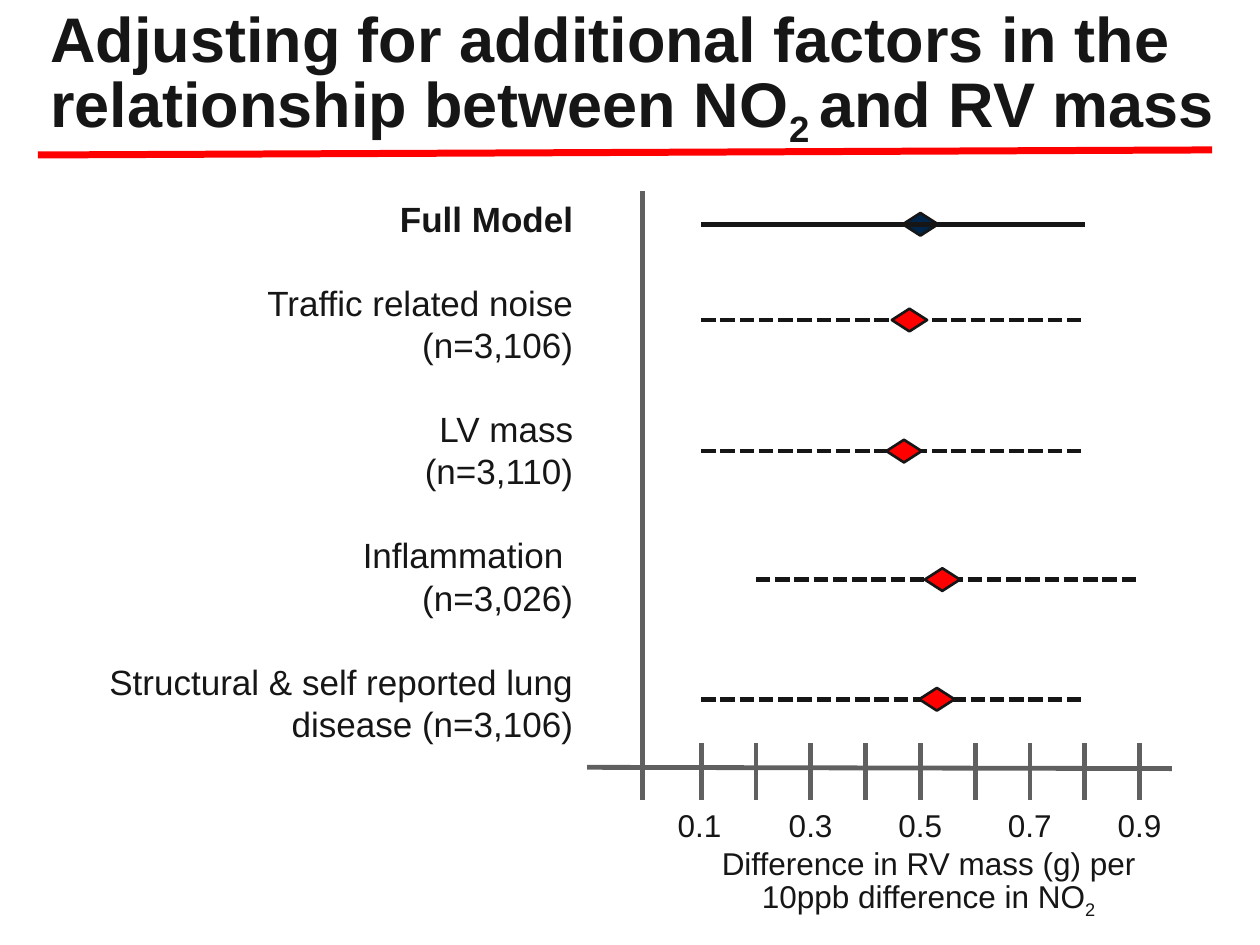
from dataclasses import dataclass

from pptx import Presentation
from pptx.dml.color import RGBColor
from pptx.enum.dml import MSO_LINE
from pptx.enum.shapes import MSO_CONNECTOR, MSO_SHAPE
from pptx.enum.text import MSO_ANCHOR, MSO_AUTO_SIZE, PP_ALIGN
from pptx.oxml.ns import qn
from pptx.util import Inches, Pt
from lxml import etree

STRAIGHT = MSO_CONNECTOR.STRAIGHT
DIAMOND = MSO_SHAPE.DIAMOND
DASH = MSO_LINE.SQUARE_DOT
LEFT, CENTER, RIGHT = PP_ALIGN.LEFT, PP_ALIGN.CENTER, PP_ALIGN.RIGHT
TOP, MIDDLE = MSO_ANCHOR.TOP, MSO_ANCHOR.MIDDLE
FIXED_SIZE = MSO_AUTO_SIZE.NONE


@dataclass(frozen=True)
class Theme:
    font: str = "Arial"
    ink: str = "161616"
    axis: str = "606060"
    accent: str = "FF0000"
    full_model: str = "00254A"
    title_size: float = 36
    label_size: float = 20
    axis_size: float = 18
    title_pitch: float = 43
    label_pitch: float = 24
    axis_pitch: float = 21.6
    rule_width: float = 4
    line_width: float = 2.75
    marker_outline: float = 1.5


@dataclass(frozen=True)
class Estimate:
    label: tuple[str, ...]
    y: float
    low: float
    mean: float
    high: float
    is_full: bool = False


THEME = Theme()
ESTIMATES = (
    Estimate(("Full Model",), 1.78, 0.1, 0.5, 0.8, True),
    Estimate(("Traffic related noise", "(n=3,106)"), 2.54, 0.1, 0.48, 0.8),
    Estimate(("LV mass", "(n=3,110)"), 3.58, 0.1, 0.47, 0.8),
    Estimate(("Inflammation ", "(n=3,026)"), 4.6, 0.2, 0.54, 0.9),
    Estimate(("Structural & self reported lung disease (n=3,106)",), 5.55, 0.1, 0.53, 0.8),
)
AXIS_ZERO, AXIS_UNIT = 5.13, 4.35
TICK_TOP, TICK_BOTTOM = 5.9, 6.35
MARKER_WIDTH, MARKER_HEIGHT = 0.28, 0.18
CAPTION_LEFT, INSET = 5.28, 0.1


def axis_x(value: float) -> float:
    return AXIS_ZERO + AXIS_UNIT * value


def draw_line(slide, start: tuple, end: tuple, color: str, width: float, dash=None) -> None:
    line = slide.shapes.add_connector(STRAIGHT, *map(Inches, start + end))
    line.line.color.rgb = RGBColor.from_string(color)
    line.line.width = Pt(width)
    if dash is not None:
        line.line.dash_style = dash
    etree.SubElement(line._element.spPr, qn("a:effectLst"))


def draw_marker(slide, x: float, y: float, color: str) -> None:
    corner = (x - MARKER_WIDTH / 2, y - MARKER_HEIGHT / 2)
    marker = slide.shapes.add_shape(
        DIAMOND, *map(Inches, corner + (MARKER_WIDTH, MARKER_HEIGHT)))
    marker.shadow.inherit = False
    marker.fill.solid()
    marker.fill.fore_color.rgb = RGBColor.from_string(color)
    marker.line.color.rgb = RGBColor.from_string(THEME.ink)
    marker.line.width = Pt(THEME.marker_outline)


def draw_estimate(slide, estimate: Estimate) -> None:
    def interval() -> None:
        draw_line(slide, (axis_x(estimate.low), estimate.y), (axis_x(estimate.high), estimate.y),
                  THEME.ink, THEME.line_width, None if estimate.is_full else DASH)

    def marker() -> None:
        draw_marker(slide, axis_x(estimate.mean), estimate.y,
                    THEME.full_model if estimate.is_full else THEME.accent)

    for draw in (marker, interval) if estimate.is_full else (interval, marker):
        draw()


def place_text(shape, box: tuple, anchor):
    shape.left, shape.top, shape.width, shape.height = map(Inches, box)
    frame = shape.text_frame
    frame.word_wrap = True
    frame.auto_size = FIXED_SIZE
    frame.vertical_anchor = anchor
    return frame


def format_paragraph(paragraph, size: float, pitch: float, align, bold: bool = False) -> None:
    paragraph.alignment = align
    paragraph.line_spacing = Pt(pitch)
    paragraph.space_before = paragraph.space_after = Pt(0)
    font = paragraph.font
    font.name, font.size, font.bold = THEME.font, Pt(size), bold
    font.color.rgb = RGBColor.from_string(THEME.ink)


def add_runs(paragraph, *parts: tuple[str, bool]) -> None:
    for text, is_subscript in parts:
        run = paragraph.add_run()
        run.text = text
        if is_subscript:
            run.font._element.set("baseline", "-25000")


def write_title(slide) -> None:
    frame = place_text(slide.shapes.title, (0.3, 0, 9.7, 1.19), MIDDLE)
    heading = frame.paragraphs[0]
    add_runs(heading,
             ("Adjusting for additional factors in the relationship between NO", False),
             ("2 ", True), ("and RV mass", False))
    format_paragraph(heading, THEME.title_size, THEME.title_pitch, LEFT, True)


def write_labels(slide) -> None:
    frame = place_text(slide.placeholders[1], (0.73, 1.52, 3.92, 4.48), TOP)
    frame.text = "\n".join(line for estimate in ESTIMATES for line in estimate.label)
    paragraphs = iter(frame.paragraphs)
    for estimate in ESTIMATES:
        for _ in estimate.label:
            label = next(paragraphs)
            format_paragraph(label, THEME.label_size, THEME.label_pitch, RIGHT, estimate.is_full)
            properties = label._p.get_or_add_pPr()
            properties.set("marL", "0")
            properties.set("indent", "0")
            etree.SubElement(properties, qn("a:buNone"))
            properties.append(properties.find(qn("a:defRPr")))
        label.space_after = Pt(THEME.label_pitch)


def write_axis_caption(slide) -> None:
    box = (CAPTION_LEFT, TICK_BOTTOM, 4.18, 1.01)
    frame = place_text(slide.shapes.add_textbox(*map(Inches, box)), box, TOP)
    scale, caption = frame.paragraphs[0], frame.add_paragraph()
    values = (0.1, 0.3, 0.5, 0.7, 0.9)
    add_runs(scale, ("\t".join(map(str, values)), False))
    add_runs(caption, ("Difference in RV mass (g) per 10ppb difference in NO", False), ("2", True))
    for paragraph, align in ((scale, LEFT), (caption, CENTER)):
        format_paragraph(paragraph, THEME.axis_size, THEME.axis_pitch, align)
    properties = scale._p.get_or_add_pPr()
    tabs = etree.SubElement(properties, qn("a:tabLst"))
    for value in values[1:]:
        position = Inches(axis_x(value) - CAPTION_LEFT - INSET)
        etree.SubElement(tabs, qn("a:tab"), pos=str(int(position)), algn="ctr")
    properties.append(properties.find(qn("a:defRPr")))


def draw_axes(slide) -> None:
    draw_line(slide, (4.66, 6.09), (9.3, 6.1), THEME.axis, THEME.line_width)
    draw_line(slide, (5.1, 1.52), (5.1, TICK_BOTTOM), THEME.axis, THEME.line_width)
    for tenth in range(1, 10):
        x = axis_x(tenth / 10)
        draw_line(slide, (x, TICK_TOP), (x, TICK_BOTTOM), THEME.axis, THEME.line_width)


def main() -> None:
    presentation = Presentation()
    presentation.slide_width, presentation.slide_height = Inches(10), Inches(7.5)
    slide = presentation.slides.add_slide(presentation.slide_layouts[1])
    write_title(slide)
    draw_line(slide, (0.3, 1.23), (9.62, 1.19), THEME.accent, THEME.rule_width)
    write_labels(slide)
    draw_axes(slide)
    write_axis_caption(slide)
    for estimate in ESTIMATES:
        draw_estimate(slide, estimate)
    presentation.save("out.pptx")


if __name__ == "__main__":
    main()
